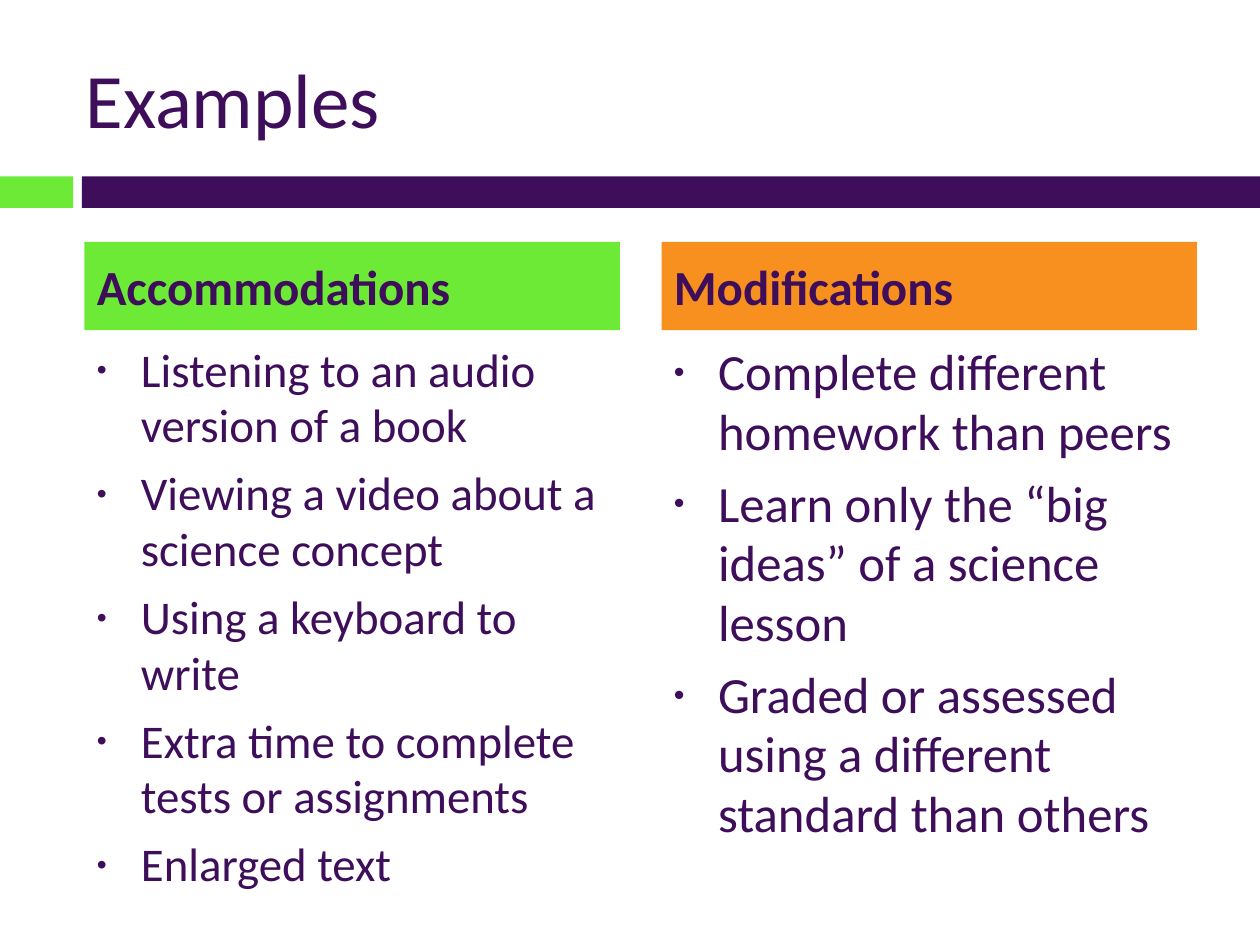
from dataclasses import dataclass

from lxml import etree
from pptx import Presentation
from pptx.dml.color import RGBColor
from pptx.enum.shapes import MSO_SHAPE
from pptx.enum.text import MSO_ANCHOR, PP_ALIGN
from pptx.oxml.ns import qn
from pptx.util import Pt

RECT = MSO_SHAPE.RECTANGLE
TOP, MIDDLE = MSO_ANCHOR.TOP, MSO_ANCHOR.MIDDLE
LEFT = PP_ALIGN.LEFT
SCALE = 9144


def px(n):
    return n * SCALE


@dataclass(frozen=True)
class Theme:
    font: str = "Calibri"
    plum: str = "3E0E5B"
    lime: str = "6CEA35"
    orange: str = "F7901E"
    title: float = 44
    head: float = 28
    gap: float = 7


def write(frame, text, *, font, size, color, bold=False, first=False, gap=0, lead=1):
    para = frame.paragraphs[0] if first else frame.add_paragraph()
    para.alignment = LEFT
    para.space_before = Pt(gap)
    para.line_spacing = lead
    run = para.add_run()
    run.text = text
    run.font.name = font
    run.font.size = Pt(size)
    run.font.bold = bold
    run.font.color.rgb = RGBColor.from_string(color)
    return para


def mark(para, indent):
    props = para._p.get_or_add_pPr()
    props.set("marL", str(px(indent)))
    props.set("indent", str(px(-indent)))
    etree.SubElement(props, qn("a:buSzPct"), val="60000")
    etree.SubElement(props, qn("a:buFont"), typeface="Arial")
    etree.SubElement(props, qn("a:buChar"), char="•")


class Page:
    def __init__(self, slide, theme):
        self.slide = slide
        self.theme = theme

    def bar(self, x, y, w, h, color):
        shape = self.slide.shapes.add_shape(RECT, px(x), px(y), px(w), px(h))
        shape.shadow.inherit = False
        shape.fill.solid()
        shape.fill.fore_color.rgb = RGBColor.from_string(color)
        shape.line.fill.background()
        return shape

    def frame(self, x, y, w, h, anchor):
        box = self.slide.shapes.add_textbox(px(x), px(y), px(w), px(h))
        frame = box.text_frame
        frame.word_wrap = True
        frame.vertical_anchor = anchor
        return frame

    def title(self, text, x, y, w, h):
        style = self.theme
        write(self.frame(x, y, w, h, MIDDLE), text, first=True,
              font=style.font, size=style.title, color=style.plum)

    def head(self, text, x, y, w, h, color):
        style = self.theme
        frame = self.bar(x, y, w, h, color).text_frame
        frame.word_wrap = True
        frame.vertical_anchor = MIDDLE
        write(frame, text, first=True, bold=True, gap=style.gap,
              font=style.font, size=style.head, color=style.plum)

    def list(self, items, x, y, w, h, size, lead):
        style = self.theme
        frame = self.frame(x, y, w, h, TOP)
        for i, item in enumerate(items):
            para = write(frame, item, first=i == 0, gap=style.gap, lead=lead,
                         font=style.font, size=size, color=style.plum)
            mark(para, 35)


def main():
    deck = Presentation()
    deck.slide_width, deck.slide_height = px(1000), px(750)
    theme = Theme()
    page = Page(deck.slides.add_slide(deck.slide_layouts[6]), theme)

    page.bar(0, 140, 58, 25, theme.lime)
    page.bar(65, 140, 935, 25, theme.plum)
    page.title("Examples", 58, 30, 892, 95)

    columns = [
        ("Accommodations", theme.lime, 26.8, 0.99, [
            "Listening to an audio version of a book",
            "Viewing a video about a science concept",
            "Using a keyboard to write",
            "Extra time to complete tests or assignments",
            "Enlarged text",
        ]),
        ("Modifications", theme.orange, 29, 0.98, [
            "Complete different homework than peers",
            "Learn only the “big ideas” of a science lesson",
            "Graded or assessed using a different standard than others",
        ]),
    ]
    for i, (head, color, size, lead, items) in enumerate(columns):
        x = 67 + i * 458
        page.head(head, x, 192, 425, 70, color)
        page.list(items, x, 267, 425, 392, size, lead)

    deck.save("out.pptx")


if __name__ == "__main__":
    main()
